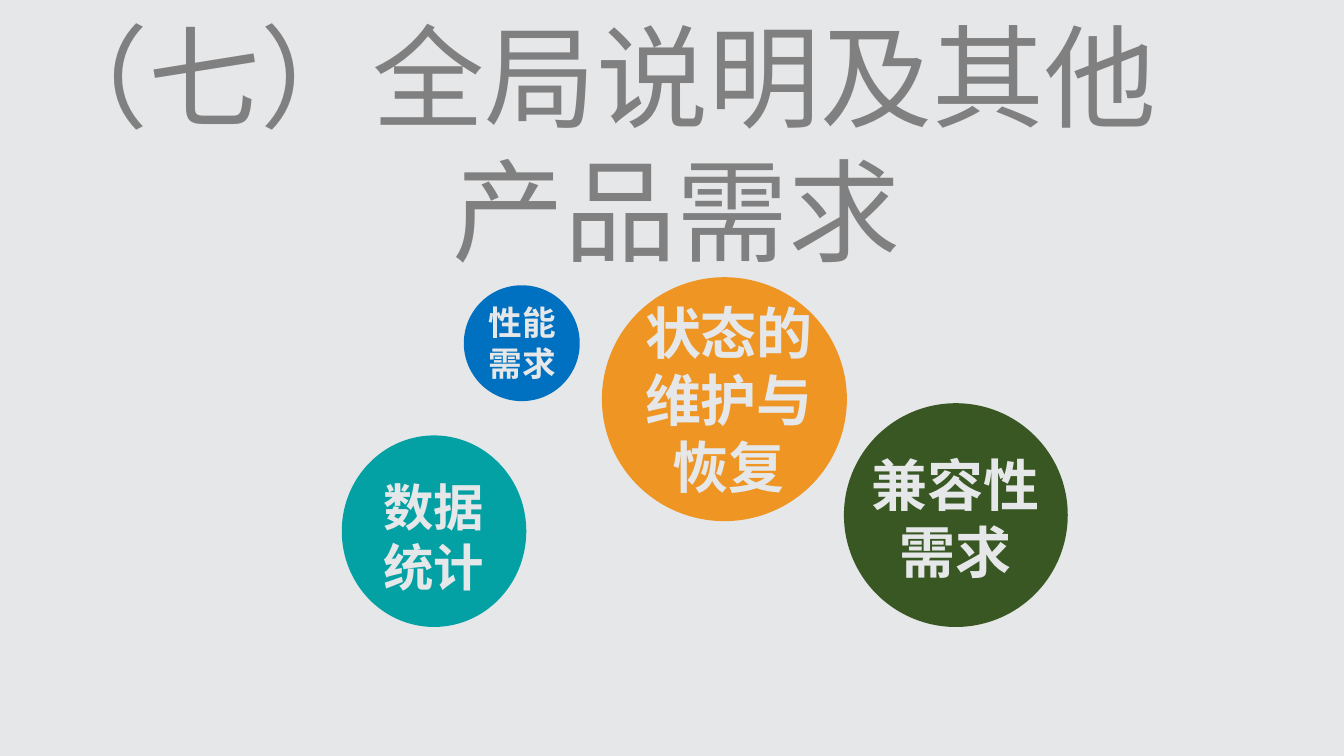
from pptx import Presentation
from pptx.dml.color import RGBColor
from pptx.enum.shapes import MSO_SHAPE
from pptx.enum.text import MSO_ANCHOR, MSO_AUTO_SIZE, PP_ALIGN
from pptx.util import Inches, Pt

LEFT, CENTER = PP_ALIGN.LEFT, PP_ALIGN.CENTER
TOP = MSO_ANCHOR.TOP
GROW = MSO_AUTO_SIZE.SHAPE_TO_FIT_TEXT
OVAL = MSO_SHAPE.OVAL
TITLE_ONLY = 5

# Content: boxes are left, top, width, height in inches
TITLE_LINES = [("（七）全局说明及其他", LEFT), ("产品需求", CENTER)]
TITLE_BOX = (0.26, 0.02, 12.9, 2.79)
BUBBLES = [
    {"label": "数据统计", "color": "teal", "size": "medium",
     "circle": (3.39, 4.32, 1.83, 1.9), "text": (3.65, 4.67, 1.3, 1.12)},
    {"label": "状态的维护与恢复", "color": "orange", "size": "large",
     "circle": (5.97, 2.75, 2.43, 2.42), "text": (6.05, 2.91, 2.36, 2.31)},
    {"label": "兼容性需求", "color": "green", "size": "large",
     "circle": (8.37, 4, 2.22, 2.22), "text": (8.45, 4.42, 2.06, 1.28)},
    {"label": "性能需求", "color": "blue", "size": "small",
     "circle": (4.6, 2.83, 1.15, 1.15), "text": (4.7, 2.95, 0.96, 0.91)},
]

THEME = {
    "font": "Cabin",
    "colors": {"background": "E6E7E9", "title": "808080", "teal": "03A1A4",
               "orange": "EE9524", "green": "385723", "blue": "0070C0"},
    "sizes": {"title": 80, "large": 40, "medium": 36, "small": 24},
}


def color(name):
    return RGBColor.from_string(THEME["colors"][name])


def inches(box):
    return [Inches(value) for value in box]


def write_text(shape, lines, *, size, color_name, bold=False):
    """Fill a shape with (text, alignment) lines in one format."""
    frame = shape.text_frame
    frame.word_wrap = True
    frame.auto_size = GROW
    frame.vertical_anchor = TOP
    for index, (text, alignment) in enumerate(lines):
        paragraph = frame.add_paragraph() if index else frame.paragraphs[0]
        paragraph.alignment = alignment
        paragraph.line_spacing = 1.0
        paragraph.space_before = Pt(0)
        run = paragraph.add_run()
        run.text = text
        run.font.name = THEME["font"]
        run.font.size = Pt(THEME["sizes"][size])
        run.font.bold = bold
        run.font.color.rgb = color(color_name)


def add_bubble(slide, bubble):
    """Group a filled circle with its label."""
    group = slide.shapes.add_group_shape()
    circle = group.shapes.add_shape(OVAL, *inches(bubble["circle"]))
    circle.shadow.inherit = False
    circle.fill.solid()
    circle.fill.fore_color.rgb = color(bubble["color"])
    circle.line.fill.background()
    label = group.shapes.add_textbox(*inches(bubble["text"]))
    write_text(label, [(bubble["label"], CENTER)], size=bubble["size"],
               color_name="background", bold=True)


def main():
    presentation = Presentation()
    presentation.slide_width = Inches(13.33)
    presentation.slide_height = Inches(7.5)
    slide = presentation.slides.add_slide(presentation.slide_layouts[TITLE_ONLY])
    slide.background.fill.solid()
    slide.background.fill.fore_color.rgb = color("background")

    # Title
    title = slide.shapes.title
    title.left, title.top, title.width, title.height = inches(TITLE_BOX)
    write_text(title, TITLE_LINES, size="title", color_name="title")

    # Bubbles
    for bubble in BUBBLES:
        add_bubble(slide, bubble)

    presentation.save("out.pptx")


if __name__ == "__main__":
    main()
